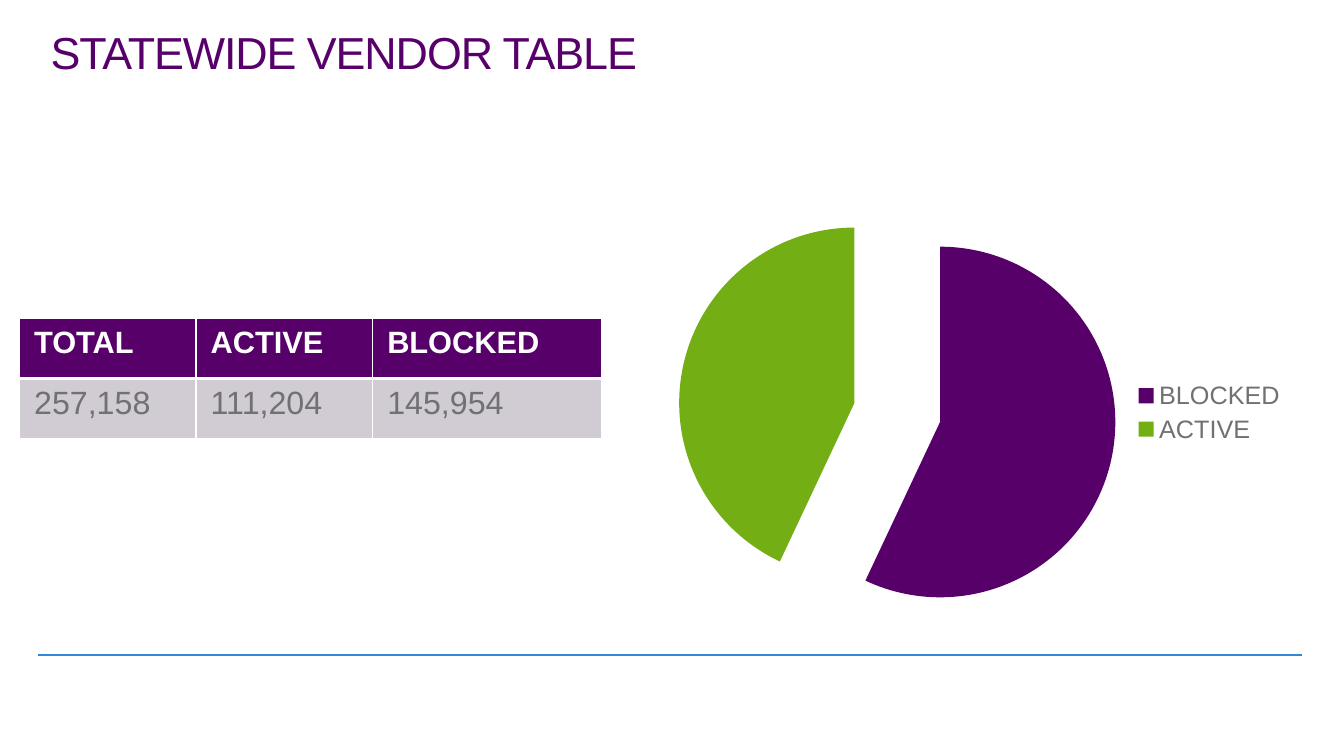
from lxml import etree
from pptx import Presentation
from pptx.chart.data import CategoryChartData
from pptx.dml.color import RGBColor
from pptx.enum import chart as ch, shapes, text
from pptx.oxml.ns import qn
from pptx.util import Cm, Pt

PURPLE = RGBColor(0x58, 0x00, 0x69)
GREEN = RGBColor(0x73, 0xAE, 0x14)
GREY = RGBColor(0x71, 0x70, 0x73)
PALE = RGBColor(0xD1, 0xCC, 0xD4)
BLUE = RGBColor(0x33, 0x88, 0xD5)
WHITE = RGBColor(0xFF, 0xFF, 0xFF)
FONT = "Arial"


def style(font, size, color, bold=False):
    font.name, font.size, font.bold = FONT, Pt(size), bold
    font.color.rgb = color


def add_run(p, words, size, color, bold=False):
    r = p.add_run()
    r.text = words
    style(r.font, size, color, bold)
    return r


def add_title(slide, words):
    sp = slide.shapes.title
    sp.left, sp.top, sp.width, sp.height = Cm(1.02), Cm(0.64), Cm(20.98), Cm(2.49)
    tf = sp.text_frame
    tf.word_wrap = True
    tf.auto_size = text.MSO_AUTO_SIZE.NONE
    tf.vertical_anchor = text.MSO_ANCHOR.TOP
    p = tf.paragraphs[0]
    p.alignment = text.PP_ALIGN.LEFT
    p.line_spacing = 0.9
    r = add_run(p, words, 32, PURPLE)
    r.font._element.set("spc", "-80")


def add_rule(slide):
    line = slide.shapes.add_connector(
        shapes.MSO_CONNECTOR.STRAIGHT, Cm(0.97), Cm(16.51), Cm(32.82), Cm(16.51))
    line.line.color.rgb = BLUE
    line.line.width = Pt(1.5)
    etree.SubElement(line._element.spPr, qn("a:effectLst"))


def set_borders(cell, bottom):
    tcPr = cell._tc.get_or_add_tcPr()
    widths = {"a:lnL": 1, "a:lnR": 1, "a:lnT": 1, "a:lnB": bottom}
    for i, (tag, width) in enumerate(widths.items()):
        ln = etree.Element(qn(tag), w=str(Pt(width)))
        fill = etree.SubElement(ln, qn("a:solidFill"))
        etree.SubElement(fill, qn("a:srgbClr"), val=str(WHITE))
        tcPr.insert(i, ln)


def fill_cell(cell, words, header):
    cell.margin_left = cell.margin_right = Cm(0.37)
    cell.margin_top = cell.margin_bottom = Cm(0.18)
    cell.fill.solid()
    cell.fill.fore_color.rgb = PURPLE if header else PALE
    size, color = (22, WHITE) if header else (23, GREY)
    add_run(cell.text_frame.paragraphs[0], words, size, color, header)
    set_borders(cell, 3 if header else 1)


def add_vendor_table(slide, rows):
    table = slide.shapes.add_table(
        len(rows), len(rows[0]), Cm(0.49), Cm(8.03), Cm(14.66), Cm(3.02)).table
    for column, width in zip(table.columns, (4.45, 4.45, 5.76)):
        column.width = Cm(width)
    for i, row in enumerate(rows):
        for j, words in enumerate(row):
            fill_cell(table.cell(i, j), words, header=i == 0)


def add_vendor_pie(slide, shares, colors):
    data = CategoryChartData()
    data.categories = list(shares)
    data.add_series("Series 1", list(shares.values()))
    chart = slide.shapes.add_chart(
        ch.XL_CHART_TYPE.PIE_EXPLODED, Cm(16.74), Cm(4.5), Cm(15.93), Cm(11.79), data).chart
    chart.has_title = False
    style(chart.font, 18, GREY)
    chart.has_legend = True
    chart.legend.position = ch.XL_LEGEND_POSITION.RIGHT
    chart.legend.include_in_layout = False
    plot = chart.plots[0]
    plot.vary_by_categories = True
    series = plot.series[0]
    for i, color in enumerate(colors):
        fill = series.points[i].format.fill
        fill.solid()
        fill.fore_color.rgb = color
    # Pull the slices apart
    for explosion in series._element.iter(qn("c:explosion")):
        explosion.set("val", "25")


def main():
    prs = Presentation()
    prs.slide_width, prs.slide_height = Cm(33.87), Cm(19.05)
    slide = prs.slides.add_slide(prs.slide_layouts[5])
    add_rule(slide)
    add_title(slide, "STATEWIDE VENDOR TABLE")
    add_vendor_table(slide, [("TOTAL", "ACTIVE", "BLOCKED"),
                             ("257,158", "111,204", "145,954")])
    add_vendor_pie(slide, {"BLOCKED": 57, "ACTIVE": 43}, (PURPLE, GREEN))
    prs.save("out.pptx")


if __name__ == "__main__":
    main()
